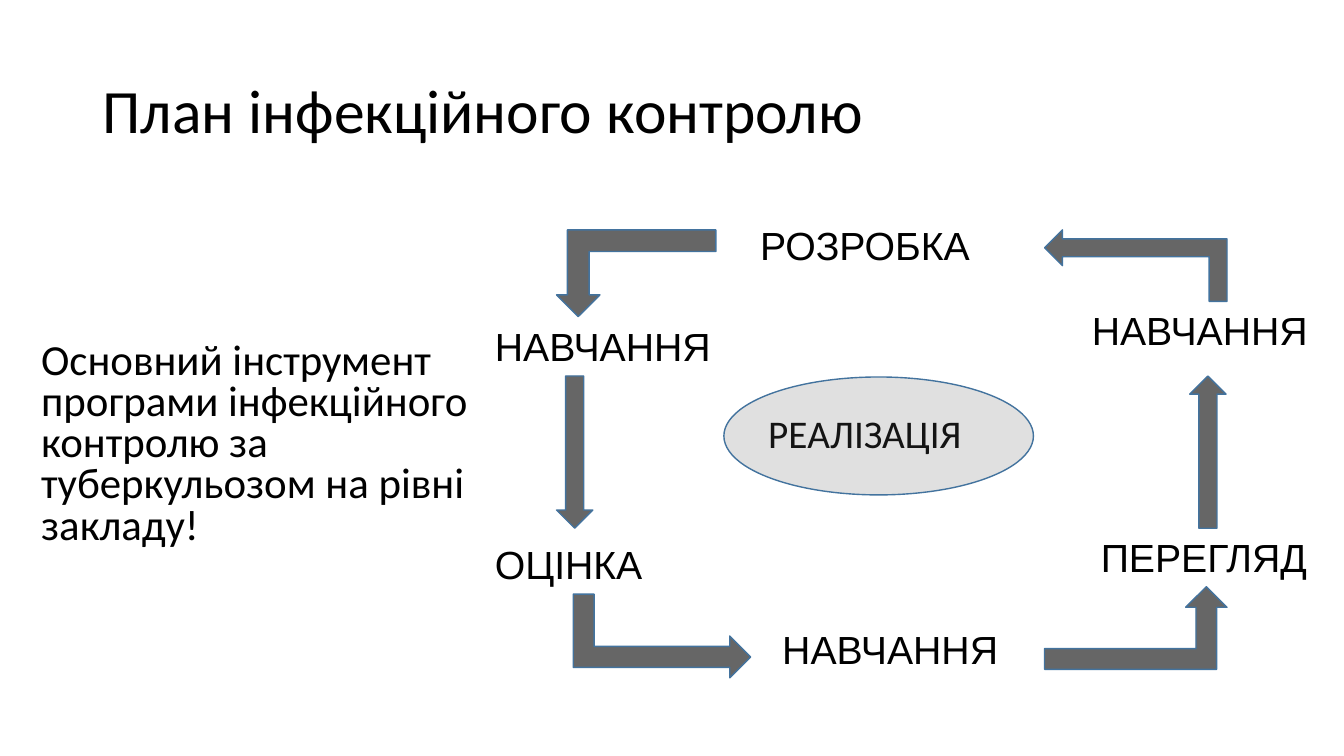
from lxml.etree import SubElement
from pptx import Presentation
from pptx.dml.color import RGBColor
from pptx.enum.shapes import MSO_SHAPE
from pptx.enum.text import MSO_ANCHOR
from pptx.oxml.ns import qn
from pptx.util import Inches, Pt

BLACK = RGBColor(0x00, 0x00, 0x00)
GRAY = RGBColor(0x66, 0x66, 0x66)
BLUE = RGBColor(0x43, 0x73, 0x9E)


class CycleSlide:
    """Adds uniformly styled text and shapes to one slide."""

    def __init__(self, prs):
        self.s = prs.slides.add_slide(prs.slide_layouts[6])

    def text(self, text, x, y, w, h, size=28, font="Arial", spacing=1.0,
             anchor=MSO_ANCHOR.TOP):
        sp = self.s.shapes.add_textbox(Inches(x), Inches(y), Inches(w), Inches(h))
        tf = sp.text_frame
        tf.word_wrap = True
        tf.vertical_anchor = anchor
        p = tf.paragraphs[0]
        p.text = text
        p.line_spacing = spacing
        p.font.size = Pt(size)
        p.font.name = font
        p.font.color.rgb = BLACK

    def shape(self, kind, x, y, w, h, rotation=0, opacity=None):
        sp = self.s.shapes.add_shape(kind, Inches(x), Inches(y), Inches(w), Inches(h))
        sp.rotation = rotation
        sp.shadow.inherit = False
        sp.fill.solid()
        sp.fill.fore_color.rgb = GRAY
        sp.line.color.rgb = BLUE
        sp.line.width = Pt(1)
        if opacity is not None:
            color = sp.fill._xPr.find(qn("a:solidFill")).find(qn("a:srgbClr"))
            SubElement(color, qn("a:alpha")).set("val", str(opacity * 1000))


def main():
    prs = Presentation()
    prs.slide_width, prs.slide_height = Inches(13.33), Inches(7.5)
    slide = CycleSlide(prs)

    # Title and statement
    slide.text("План інфекційного контролю", 0.92, 0.4, 11.5, 1.45,
               size=44, font="Calibri", spacing=0.9, anchor=MSO_ANCHOR.MIDDLE)
    slide.text("Основний інструмент програми інфекційного контролю за "
               "туберкульозом на рівні закладу!", 0.31, 3.35, 4.56, 2.26,
               size=30.6, font="Calibri", spacing=0.8)

    # Centre of the cycle: label under a translucent ellipse
    slide.text("РЕАЛІЗАЦІЯ", 7.52, 4.06, 2.92, 0.58, font="Calibri", spacing=0.9)
    slide.shape(MSO_SHAPE.OVAL, 7.18, 3.74, 3.07, 1.17, opacity=20)

    # Stages, counter-clockwise from the top
    for label, x, y, w in [
        ("РОЗРОБКА", 7.44, 2.15, 2.92),
        ("НАВЧАННЯ", 4.81, 3.15, 2.48),
        ("ОЦІНКА", 4.81, 5.31, 2.48),
        ("НАВЧАННЯ", 7.66, 6.15, 2.48),
        ("ПЕРЕГЛЯД", 10.82, 5.24, 2.43),
        ("НАВЧАННЯ", 10.73, 2.99, 2.48),
    ]:
        slide.text(label, x, y, w, 0.58)

    # Corner arrows
    for x, y, w, h, rotation in [
        (5.52, 2.28, 1.58, 0.86, 180),
        (6.15, 5.43, 0.83, 1.76, 90),
        (10.36, 5.82, 1.81, 0.82, 0),
        (10.91, 1.73, 0.71, 1.81, 270),
    ]:
        slide.shape(MSO_SHAPE.BENT_UP_ARROW, x, y, w, h, rotation)

    # Side arrows: down on the left, up on the right
    for x, rotation in [(5.52, 0), (11.8, 180)]:
        slide.shape(MSO_SHAPE.DOWN_ARROW, x, 3.73, 0.36, 1.51, rotation)

    prs.save("out.pptx")


if __name__ == "__main__":
    main()
